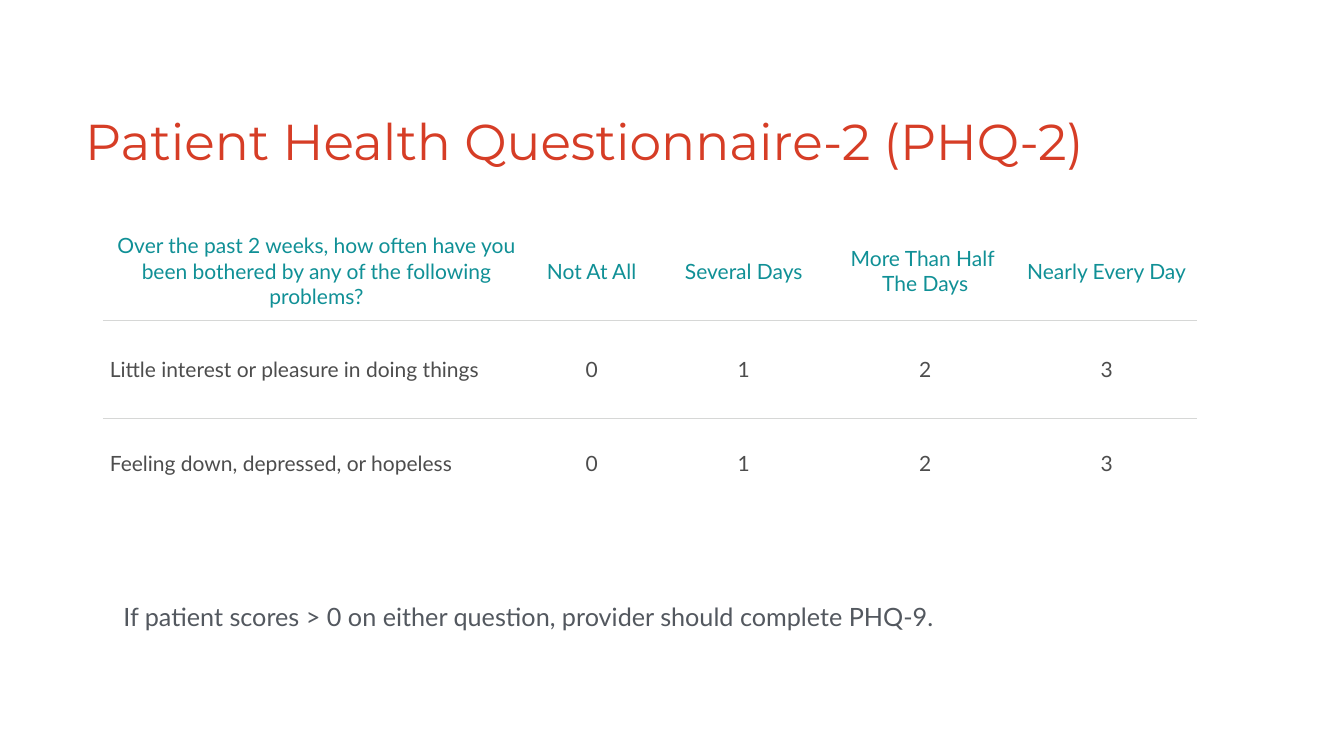
from lxml import etree
from pptx import Presentation
from pptx.dml.color import RGBColor
from pptx.enum.text import MSO_ANCHOR as Anchor, MSO_AUTO_SIZE as AutoSize, PP_ALIGN as Align
from pptx.oxml.ns import qn
from pptx.util import Inches, Pt

TITLE = "Patient Health Questionnaire-2 (PHQ-2)"
NOTE = "If patient scores > 0 on either question, provider should complete PHQ-9."
SCORES = ["0", "1", "2", "3"]
ROWS = [
    ["Over the past 2 weeks, how often have you been bothered by any of the following problems?",
     "Not At All", "Several Days", "More Than Half \nThe Days", "Nearly Every Day"],
    ["Little interest or pleasure in doing things", *SCORES],
    ["Feeling down, depressed, or hopeless", *SCORES],
]
COL_WIDTHS = [8.48, 2.44, 3.6, 3.6, 3.6]
ROW_HEIGHTS = [1.95, 1.95, 1.78]
RULE = "D6D7D6"
SIDES = ["left", "top", "right", "bottom"]


def rgb(value):
    return RGBColor.from_string(value)


def apply(target, values):
    for name, value in values.items():
        setattr(target, name, value)


def write(p, text, size, font, color, align):
    p.text = text
    p.alignment = align
    for r in p.runs:
        apply(r.font, {"size": Pt(size), "name": font})
        r.font.color.rgb = rgb(color)


def add_text(s, box, text, size, font, color, inset, wrap, align, spacing=None):
    tf = s.shapes.add_textbox(*map(Inches, box)).text_frame
    apply(tf, {"word_wrap": wrap, "auto_size": AutoSize.SHAPE_TO_FIT_TEXT,
               "vertical_anchor": Anchor.MIDDLE})
    apply(tf, {f"margin_{side}": Inches(inset) for side in SIDES})
    write(tf.paragraphs[0], text, size, font, color, align)
    tf.paragraphs[0].line_spacing = spacing


def set_borders(cell, top, bottom):
    borders = {"a:lnL": False, "a:lnR": False, "a:lnT": top, "a:lnB": bottom}
    tc_pr = cell._tc.get_or_add_tcPr()
    for i, (tag, ruled) in enumerate(borders.items()):
        line = etree.Element(qn(tag), w=str(Pt(1)))
        if ruled:
            fill = etree.SubElement(line, qn("a:solidFill"))
            etree.SubElement(fill, qn("a:srgbClr"), val=RULE)
        else:
            etree.SubElement(line, qn("a:noFill"))
        tc_pr.insert(i, line)


def add_questionnaire(s, box):
    table = s.shapes.add_table(len(ROWS), len(COL_WIDTHS), *map(Inches, box)).table
    apply(table, {"first_row": False, "horz_banding": False})
    for column, width in zip(table.columns, COL_WIDTHS):
        column.width = Inches(width)
    for i, (row, height) in enumerate(zip(table.rows, ROW_HEIGHTS)):
        row.height = Inches(height)
        for j, cell in enumerate(row.cells):
            cell.fill.background()
            cell.vertical_anchor = Anchor.MIDDLE
            apply(cell, {f"margin_{side}": Inches(0.14) for side in SIDES})
            align = Align.LEFT if i and not j else Align.CENTER
            write(cell.text_frame.paragraphs[0], ROWS[i][j], 30, "Lato",
                  "4D4D4D" if i else "109096", align)
            set_borders(cell, top=i > 0, bottom=i < len(ROWS) - 1)


def main():
    prs = Presentation()
    apply(prs, {"slide_width": Inches(26.67), "slide_height": Inches(15)})
    s = prs.slides.add_slide(prs.slide_layouts[6])
    add_text(s, (1.67, 2.3, 23.33, 1.26), TITLE, 72, "Montserrat", "D63D26",
             0.02, True, Align.LEFT, 0.7)
    add_questionnaire(s, (2.04, 4.4, sum(COL_WIDTHS), sum(ROW_HEIGHTS)))
    add_text(s, (2.33, 11.87, 16.31, 0.72), NOTE, 36, "Lato", "53585F",
             0.06, False, Align.CENTER)
    prs.save("out.pptx")


if __name__ == "__main__":
    main()
